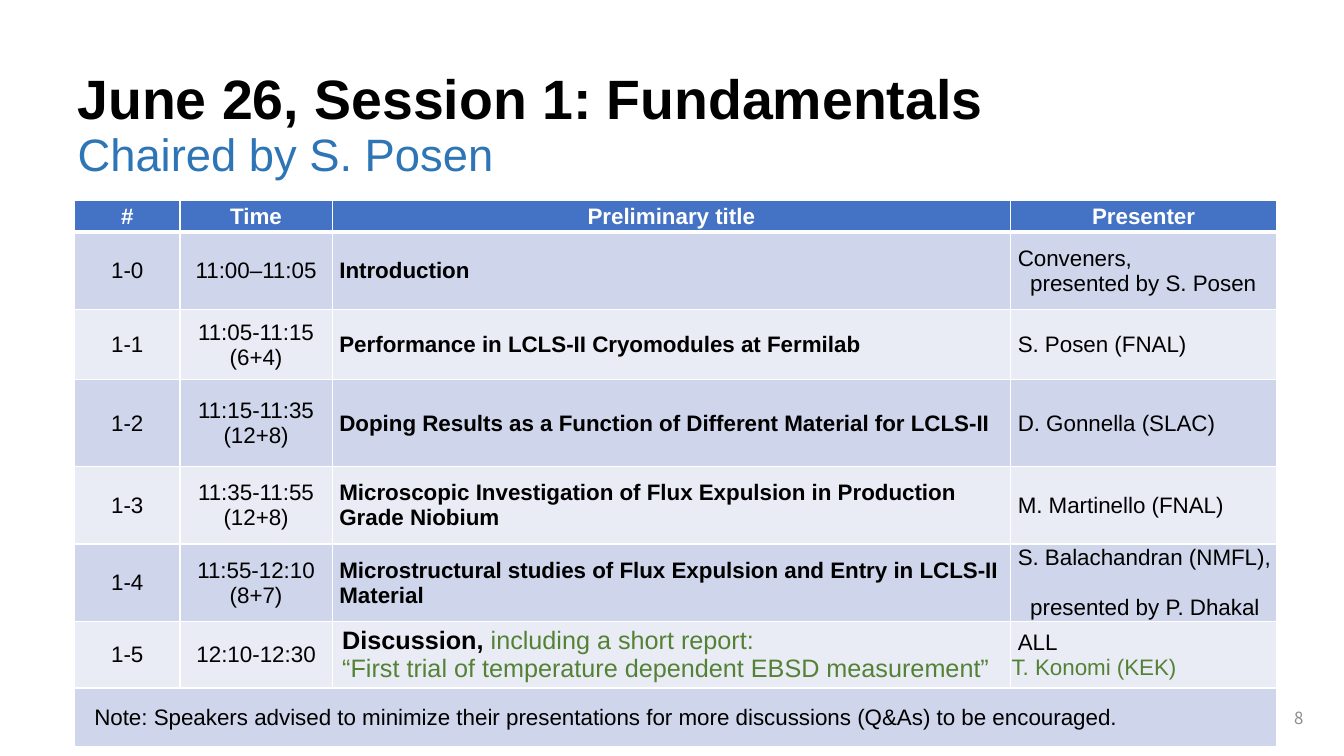
from lxml import etree
from pptx import Presentation
from pptx.dml.color import RGBColor
from pptx.enum.text import MSO_ANCHOR, MSO_AUTO_SIZE, PP_ALIGN
from pptx.oxml.ns import qn
from pptx.util import Pt

LEFT, CENTER, RIGHT = PP_ALIGN.LEFT, PP_ALIGN.CENTER, PP_ALIGN.RIGHT
MIDDLE, TOP = MSO_ANCHOR.MIDDLE, MSO_ANCHOR.TOP
NO_FIT = MSO_AUTO_SIZE.NONE

BLACK, WHITE, GREEN = "000000", "FFFFFF", "548235"
HEAD, DARK, LIGHT = "4472C4", "CFD5EA", "E9EBF5"
STEP = 4.45  # base text indent in cells


def color(code):
    return RGBColor.from_string(code)


class Deck:
    """Holds the text style and the current slide."""

    def __init__(self, wide, high):
        self.prs = Presentation()
        self.prs.slide_width, self.prs.slide_height = Pt(wide), Pt(high)
        self.slide = self.prs.slides.add_slide(self.prs.slide_layouts[5])
        self.font, self.size = "Arial", 16

    def run(self, par, text, size=None, hue=BLACK, bold=False, font=None):
        run = par.add_run()
        run.text = text
        run.font.name = font or self.font
        run.font.size = Pt(size or self.size)
        run.font.bold = bold
        run.font.color.rgb = color(hue)

    def title(self, box, lines):
        shape = self.slide.shapes.title
        shape.left, shape.top, shape.width, shape.height = map(Pt, box)
        frame = shape.text_frame
        frame.auto_size = NO_FIT
        frame.vertical_anchor = MIDDLE
        par = frame.paragraphs[0]
        par.alignment, par.line_spacing = LEFT, 0.9
        for i, (text, size, hue, bold) in enumerate(lines):
            if i:
                par.add_line_break()
            self.run(par, text, size, hue, bold)

    def label(self, box, text, size, hue, font):
        frame = self.slide.shapes.add_textbox(*map(Pt, box)).text_frame
        frame.word_wrap = True
        frame.vertical_anchor = MIDDLE
        par = frame.paragraphs[0]
        par.alignment = RIGHT
        self.run(par, text, size, hue, font=font)

    def table(self, left, top, cols, rows):
        grid = self.slide.shapes.add_table(
            len(rows), len(cols), Pt(left), Pt(top),
            Pt(sum(cols)), Pt(sum(rows))).table
        for col, wide in zip(grid.columns, cols):
            col.width = Pt(wide)
        for row, high in zip(grid.rows, rows):
            row.height = Pt(high)
        return grid

    def paint(self, cell, fill, above=1, below=1):
        cell.fill.solid()
        cell.fill.fore_color.rgb = color(fill)
        props = cell._tc.get_or_add_tcPr()
        edges = (("a:lnL", 1), ("a:lnR", 1), ("a:lnT", above), ("a:lnB", below))
        for i, (tag, wide) in enumerate(edges):
            line = etree.Element(qn(tag), w=str(Pt(wide)))
            solid = etree.SubElement(line, qn("a:solidFill"))
            etree.SubElement(solid, qn("a:srgbClr"), val=WHITE)
            props.insert(i, line)

    def inset(self, cell, sides=(0.7, 0.7, 0.7, 0), anchor=MIDDLE):
        (cell.margin_left, cell.margin_top,
         cell.margin_right, cell.margin_bottom) = map(Pt, sides)
        cell.vertical_anchor = anchor

    def enter(self, cell, lines, align=LEFT, indents=(STEP, STEP), gap=0):
        """Each line is a list of (text, style) runs."""
        frame = cell.text_frame
        for i, (runs, indent) in enumerate(zip(lines, indents)):
            par = frame.add_paragraph() if i else frame.paragraphs[0]
            par.alignment = align
            if align == LEFT:
                par._p.get_or_add_pPr().set("marL", str(Pt(indent)))
            if i and gap:
                par.space_before = Pt(gap)
            for text, style in runs:
                self.run(par, text, **style)


def plain(lines, **style):
    return [[(text, style)] for text in lines]


HEADS = ["#", "Time", "Preliminary title", "Presenter"]
TALKS = [
    (["11:00–11:05"], ["Introduction"],
     ["Conveners,", "presented by S. Posen"]),
    (["11:05-11:15", "(6+4)"],
     ["Performance in LCLS-II Cryomodules at Fermilab"],
     ["S. Posen (FNAL)"]),
    (["11:15-11:35", "(12+8)"],
     ["Doping Results as a Function of Different Material for LCLS-II"],
     ["D. Gonnella (SLAC)"]),
    (["11:35-11:55", "(12+8)"],
     ["Microscopic Investigation of Flux Expulsion in Production",
      "Grade Niobium"],
     ["M. Martinello (FNAL)"]),
    (["11:55-12:10", "(8+7)"],
     ["Microstructural studies of Flux Expulsion and Entry in LCLS-II",
      "Material"],
     ["S. Balachandran (NMFL),", "presented by P. Dhakal"]),
]
NOTE = ("Note: Speakers advised to minimize their presentations "
        "for more discussions (Q&As) to be encouraged.")


def main():
    deck = Deck(960, 540)

    # Title
    deck.title((48.2, 44.6, 828, 91.4), [
        ("June 26, Session 1: Fundamentals", 39.6, BLACK, True),
        ("Chaired by S. Posen", 32.4, "2E75B6", False)])

    # Table frame: fills, borders and insets
    grid = deck.table(53.3, 143.3, [75.3, 108.7, 484.6, 190.1],
                      [22.3, 55.4, 50.2, 62, 55.4, 55.4, 47, 42])
    last = len(grid.rows) - 1
    grid.cell(last, 0).merge(grid.cell(last, 3))
    for r, row in enumerate(grid.rows):
        fill = HEAD if r == 0 else DARK if r % 2 else LIGHT
        for cell in row.cells:
            deck.inset(cell)
            deck.paint(cell, fill, 3 if r == 1 else 1, 3 if r == 0 else 1)

    # Header row
    for c, head in enumerate(HEADS):
        deck.enter(grid.cell(0, c), plain([head], hue=WHITE, bold=True), CENTER)

    # Talks
    for r, (time, topic, names) in enumerate(TALKS, 1):
        deck.enter(grid.cell(r, 0), plain([f"1-{r - 1}"]), CENTER)
        deck.enter(grid.cell(r, 1), plain(time), CENTER)
        deck.enter(grid.cell(r, 2), plain(topic, bold=True))
        deck.enter(grid.cell(r, 3), plain(names), indents=(STEP, 3 * STEP),
                   gap=18 if r == len(TALKS) else 0)

    # Discussion
    talk = last - 1
    deck.enter(grid.cell(talk, 0), plain(["1-5"]), CENTER)
    deck.enter(grid.cell(talk, 1), plain(["12:10-12:30"]), CENTER)
    report = {"size": 18, "hue": GREEN}
    cell = grid.cell(talk, 2)
    deck.inset(cell, (7.2, 3.6, 7.2, 3.6), TOP)
    deck.enter(cell, [
        [("Discussion, ", {"size": 18, "bold": True}),
         ("including a short report:", report)],
        [("“First trial of temperature dependent EBSD measurement”", report)],
    ], indents=(0, 0))
    deck.enter(grid.cell(talk, 3),
               plain(["ALL"]) + plain(["T. Konomi (KEK)"], hue=GREEN),
               indents=(STEP, 0))

    # Note
    deck.enter(grid.cell(last, 0), plain([NOTE]), indents=(3 * STEP,))

    # Page number
    deck.label((722.2, 498.2, 216, 28.8), "8", 12, "8C8C8C", "Noto Sans CJK JP")

    deck.prs.save("out.pptx")


if __name__ == "__main__":
    main()
